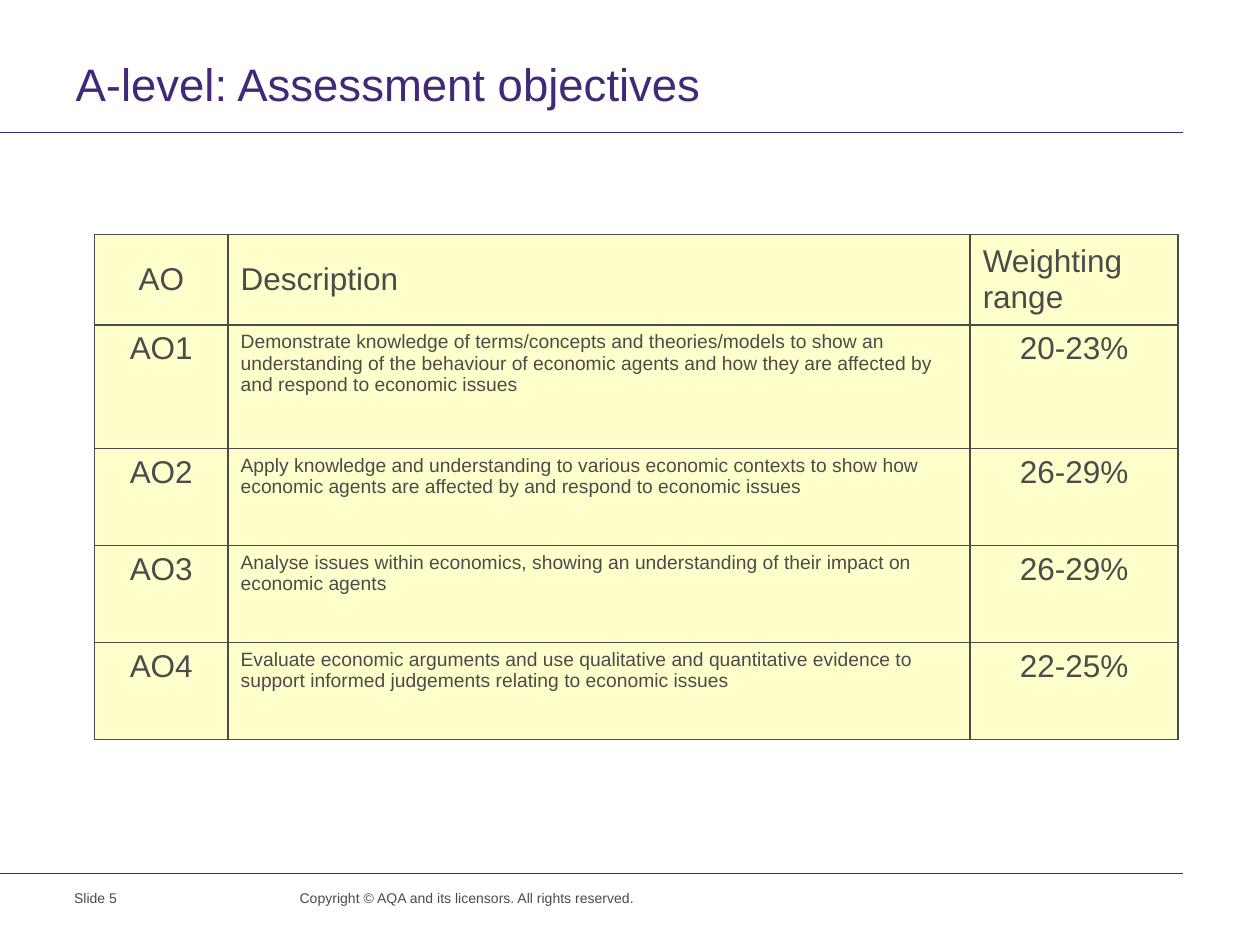
import pptx
import pptx.util
import pptx.dml.color
import pptx.enum.shapes
import pptx.enum.text
import pptx.oxml.ns
import lxml.etree

Inches = pptx.util.Inches
Pt = pptx.util.Pt
ALIGN = pptx.enum.text.PP_ALIGN
ANCHOR = pptx.enum.text.MSO_ANCHOR

FONT = "Arial"
PURPLE = "412878"
GREY = "4B4B4B"
CREAM = "FFFFCB"

COLUMN_WIDTHS = [1.06, 5.89, 1.65]
ROW_HEIGHTS = [0.72, 0.98, 0.77, 0.77, 0.77]
OBJECTIVES = [
    ("AO", "Description", "Weighting range"),
    ("AO1", "Demonstrate knowledge of terms/concepts and theories/models to show an "
     "understanding of the behaviour of economic agents and how they are affected by "
     "and respond to economic issues", "20-23%"),
    ("AO2", "Apply knowledge and understanding to various economic contexts to show how "
     "economic agents are affected by and respond to economic issues", "26-29%"),
    ("AO3", "Analyse issues within economics, showing an understanding of their impact on "
     "economic agents", "26-29%"),
    ("AO4", "Evaluate economic arguments and use qualitative and quantitative evidence to "
     "support informed judgements relating to economic issues", "22-25%"),
]


def color(hex_value):
    return pptx.dml.color.RGBColor.from_string(hex_value)


def write(text_frame, text, size, hex_value, align=ALIGN.LEFT):
    """Put one run of formatted text in the first paragraph."""
    paragraph = text_frame.paragraphs[0]
    paragraph.alignment = align
    run = paragraph.add_run()
    run.text = text
    run.font.name = FONT
    run.font.size = Pt(size)
    run.font.color.rgb = color(hex_value)
    return paragraph


def add_rule(slide, top):
    """Draw a thin line from the left edge of the slide."""
    rule = slide.shapes.add_connector(
        pptx.enum.shapes.MSO_CONNECTOR.STRAIGHT,
        0, Inches(top), Inches(9.39), Inches(top))
    rule.line.color.rgb = color(PURPLE)
    rule.line.width = Pt(0.6)
    properties = rule._element.spPr
    lxml.etree.SubElement(properties, pptx.oxml.ns.qn("a:effectLst"))


def set_title(slide, text):
    title = slide.shapes.title
    title.left, title.top = Inches(0.5), Inches(0.44)
    title.width, title.height = Inches(9.5), Inches(0.48)
    title.text_frame.vertical_anchor = ANCHOR.TOP
    title.text_frame.auto_size = pptx.enum.text.MSO_AUTO_SIZE.NONE
    paragraph = write(title.text_frame, text, 26, PURPLE)
    paragraph.line_spacing = Pt(28)
    paragraph.space_before = Pt(0)


def add_footer(slide, left, width, height, text):
    box = slide.shapes.add_textbox(
        Inches(left), Inches(7.01), Inches(width), Inches(height))
    box.text_frame.word_wrap = True
    write(box.text_frame, text, 8, GREY)


def set_borders(cell):
    """Give a cell a 1 pt line on each side, placed before its fill."""
    properties = cell._tc.get_or_add_tcPr()
    for index, side in enumerate(("lnL", "lnR", "lnT", "lnB")):
        line = properties.makeelement(pptx.oxml.ns.qn("a:" + side), {"w": str(Pt(1))})
        fill = lxml.etree.SubElement(line, pptx.oxml.ns.qn("a:solidFill"))
        lxml.etree.SubElement(fill, pptx.oxml.ns.qn("a:srgbClr"), val=GREY)
        properties.insert(index, line)


def add_objectives_table(slide):
    frame = slide.shapes.add_table(
        len(ROW_HEIGHTS), len(COLUMN_WIDTHS), Inches(0.75), Inches(1.86),
        Inches(sum(COLUMN_WIDTHS)), Inches(sum(ROW_HEIGHTS)))
    table = frame.table
    table.horz_banding = False
    for column, width in zip(table.columns, COLUMN_WIDTHS):
        column.width = Inches(width)
    for row, height in zip(table.rows, ROW_HEIGHTS):
        row.height = Inches(height)

    for row_index, texts in enumerate(OBJECTIVES):
        is_header = row_index == 0
        for column_index, text in enumerate(texts):
            cell = table.cell(row_index, column_index)
            cell.fill.solid()
            cell.fill.fore_color.rgb = color(CREAM)
            set_borders(cell)
            cell.vertical_anchor = ANCHOR.MIDDLE if is_header else ANCHOR.TOP
            # Codes and weightings are centred; other headings and descriptions are not
            centred = column_index == 0 or (column_index == 2 and not is_header)
            size = 11 if column_index == 1 and not is_header else 18
            paragraph = write(cell.text_frame, text, size, GREY,
                              ALIGN.CENTER if centred else ALIGN.LEFT)
            paragraph.runs[0].font.bold = False


def main():
    presentation = pptx.Presentation()
    presentation.slide_width = Inches(10)
    presentation.slide_height = Inches(7.5)
    slide = presentation.slides.add_slide(presentation.slide_layouts[5])

    # Rules under the title and above the footer
    for top in (1.05, 6.93):
        add_rule(slide, top)

    set_title(slide, "A-level: Assessment objectives")
    add_objectives_table(slide)

    # Footer
    add_footer(slide, 0.49, 1.56, 0.38, "Slide 5")
    add_footer(slide, 2.28, 2.93, 0.26,
               "Copyright © AQA and its licensors. All rights reserved.")

    presentation.save("out.pptx")


if __name__ == "__main__":
    main()
